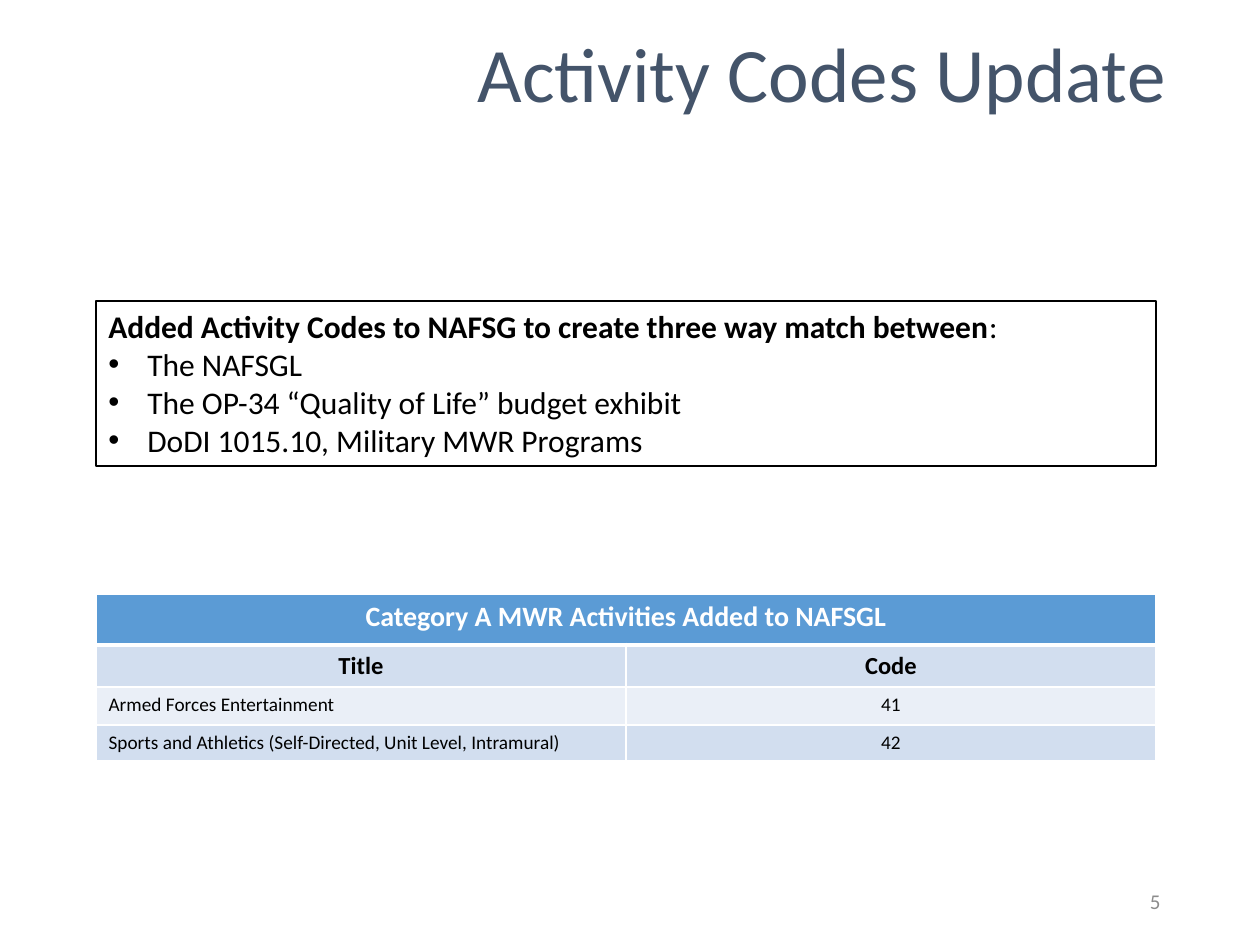
from lxml import etree
from pptx import Presentation
from pptx.dml.color import RGBColor
from pptx.enum.shapes import MSO_SHAPE
from pptx.enum.text import MSO_ANCHOR, PP_ALIGN
from pptx.oxml.ns import qn
from pptx.util import Emu, Pt

LEFT, CENTER, RIGHT = PP_ALIGN.LEFT, PP_ALIGN.CENTER, PP_ALIGN.RIGHT
TOP, MIDDLE = MSO_ANCHOR.TOP, MSO_ANCHOR.MIDDLE
RECTANGLE = MSO_SHAPE.RECTANGLE

FONT = "Calibri"
BLACK, WHITE = "000000", "FFFFFF"
HEADER_BLUE, BAND_DARK, BAND_LIGHT = "5B9BD5", "D2DEEF", "EAEFF7"
CONTENT_LEFT, CONTENT_WIDTH = 96, 1060
BULLET_INDENT = 39


def px(length):
    return Emu(round(length * 914400 / 126))


def color(hex_value):
    return RGBColor.from_string(hex_value)


def style(paragraph, size, hex_value, bold=False, align=LEFT):
    paragraph.alignment = align
    font = paragraph.font
    font.name, font.size, font.bold = FONT, Pt(size), bold
    font.color.rgb = color(hex_value)


def add_text(slide, box, text, size, hex_value, align):
    shape = slide.shapes.add_textbox(*map(px, box))
    frame = shape.text_frame
    frame.word_wrap = True
    frame.vertical_anchor = MIDDLE
    paragraph = frame.paragraphs[0]
    paragraph.text = text
    style(paragraph, size, hex_value, align=align)
    return paragraph


def add_bullet(paragraph):
    properties = paragraph._p.get_or_add_pPr()
    properties.set("marL", str(px(BULLET_INDENT)))
    properties.set("indent", str(-px(BULLET_INDENT)))
    etree.SubElement(properties, qn("a:buFont")).set("typeface", "Arial")
    etree.SubElement(properties, qn("a:buChar")).set("char", "•")


def add_outlined_list(slide, box, heading, items):
    shape = slide.shapes.add_shape(RECTANGLE, *map(px, box))
    shape.shadow.inherit = False
    shape.fill.background()
    shape.line.color.rgb = color(BLACK)
    shape.line.width = Pt(0.75)
    frame = shape.text_frame
    frame.word_wrap = True
    frame.vertical_anchor = TOP

    paragraph = frame.paragraphs[0]
    style(paragraph, 18, BLACK)
    for text, bold in ((heading, True), (":", False)):
        run = paragraph.add_run()
        run.text = text
        run.font.bold = bold
    for item in items:
        paragraph = frame.add_paragraph()
        paragraph.text = item
        add_bullet(paragraph)
        style(paragraph, 18, BLACK)


def set_borders(cell, bottom_width):
    properties = cell._tc.get_or_add_tcPr()
    for side, width in (("L", 1), ("R", 1), ("T", 1), ("B", bottom_width)):
        line = etree.SubElement(properties, qn(f"a:ln{side}"), w=str(Pt(width)))
        fill = etree.SubElement(line, qn("a:solidFill"))
        etree.SubElement(fill, qn("a:srgbClr"), val=WHITE)


def add_activity_table(slide, left, top, width, rows):
    height = sum(row[0] for row in rows)
    table = slide.shapes.add_table(
        len(rows), 2, px(left), px(top), px(width), px(height)).table
    for row_index, (row_height, fill, size, text_color, bold, aligns, texts) in enumerate(rows):
        table.rows[row_index].height = px(row_height)
        for column_index, (text, align) in enumerate(zip(texts, aligns)):
            cell = table.cell(row_index, column_index)
            set_borders(cell, 3 if row_index == 0 else 1)
            cell.fill.solid()
            cell.fill.fore_color.rgb = color(fill)
            paragraph = cell.text_frame.paragraphs[0]
            paragraph.text = text
            style(paragraph, size, text_color, bold, align)
    table.cell(0, 0).merge(table.cell(0, 1))


def main():
    presentation = Presentation()
    presentation.slide_width, presentation.slide_height = px(1260), px(945)
    slide = presentation.slides.add_slide(presentation.slide_layouts[6])

    # Title
    title = add_text(slide, (384, 6, 876, 144), "Activity Codes Update",
                     44, "44546A", CENTER)
    title.line_spacing = 0.9

    # Category A table: height, fill, size, text colour, bold, alignments, texts
    centered, body = (CENTER, CENTER), (LEFT, CENTER)
    add_activity_table(slide, CONTENT_LEFT, 594, CONTENT_WIDTH, [
        (51, HEADER_BLUE, 16, WHITE, True, centered,
         ("Category A MWR Activities Added to NAFSGL", "")),
        (42, BAND_DARK, 14, BLACK, True, centered, ("Title", "Code")),
        (38, BAND_LIGHT, 11, BLACK, False, body, ("Armed Forces Entertainment", "41")),
        (36, BAND_DARK, 11, BLACK, False, body,
         ("Sports and Athletics (Self-Directed, Unit Level, Intramural)", "42")),
    ])

    # Slide number
    add_text(slide, (890, 876, 283, 50), "5", 12, "8C8C8C", RIGHT)

    # Three way match
    add_outlined_list(
        slide, (CONTENT_LEFT, 301, CONTENT_WIDTH, 165),
        "Added Activity Codes to NAFSG to create three way match between",
        ["The NAFSGL",
         "The OP-34 “Quality of Life” budget exhibit",
         "DoDI 1015.10, Military MWR Programs"])

    presentation.save("out.pptx")


if __name__ == "__main__":
    main()
